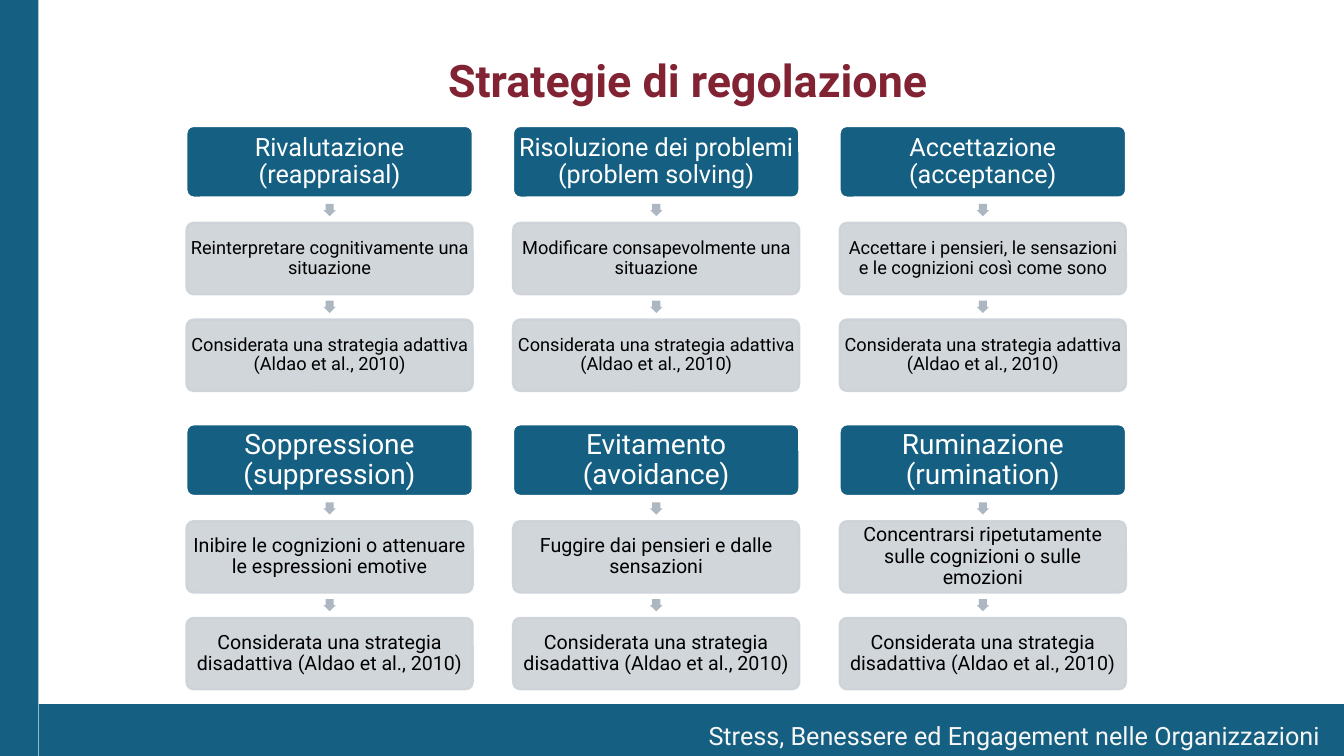
import pptx
import pptx.util
import pptx.dml.color
import pptx.enum.shapes
import pptx.enum.text
import pptx.oxml
import pptx.oxml.ns

Pt = pptx.util.Pt
RGB = pptx.dml.color.RGBColor
SHAPE = pptx.enum.shapes.MSO_SHAPE
ANCHOR = pptx.enum.text.MSO_ANCHOR
ALIGN = pptx.enum.text.PP_ALIGN

BLUE = RGB(0x15, 0x60, 0x82)
RED = RGB(0x82, 0x23, 0x34)
GREY = RGB(0xCC, 0xD2, 0xD8)
STEEL = RGB(0xAC, 0xB7, 0xC1)
PALE = RGB(0xF6, 0xF6, 0xF6)
WHITE = RGB(0xFF, 0xFF, 0xFF)
BLACK = RGB(0, 0, 0)

LEFT, WIDE, HIGH = 133.2, 204.5, 51.1
STEP, DROP, ARROW = 233.3, 69.1, 8.8

GROUPS = [
    (90, 18, 13, "Considerata una strategia adattiva (Aldao et al., 2010)", [
        ("Rivalutazione (reappraisal)",
         "Reinterpretare cognitivamente una situazione"),
        ("Risoluzione dei problemi (problem solving)",
         "Modificare consapevolmente una situazione"),
        ("Accettazione (acceptance)",
         "Accettare i pensieri, le sensazioni e le cognizioni così come sono"),
    ]),
    (303.1, 20, 14, "Considerata una strategia disadattiva (Aldao et al., 2010)", [
        ("Soppressione (suppression)",
         "Inibire le cognizioni o attenuare le espressioni emotive"),
        ("Evitamento (avoidance)",
         "Fuggire dai pensieri e dalle sensazioni"),
        ("Ruminazione (rumination)",
         "Concentrarsi ripetutamente sulle cognizioni o sulle emozioni"),
    ]),
]


class Deck:
    """Draws styled elements on the current slide."""

    font = "Roboto"

    def __init__(self):
        self.show = pptx.Presentation()
        self.show.slide_width, self.show.slide_height = Pt(960), Pt(540)
        self.slide = self.show.slides.add_slide(self.show.slide_layouts[6])

    def shape(self, kind, x, y, w, h, fill):
        item = self.slide.shapes.add_shape(kind, Pt(x), Pt(y), Pt(w), Pt(h))
        item.shadow.inherit = False
        item.fill.solid()
        item.fill.fore_color.rgb = fill
        item.line.fill.background()
        return item

    def words(self, frame, text, size, color, bold=False, align=ALIGN.CENTER):
        frame.word_wrap = True
        para = frame.paragraphs[0]
        para.alignment = align
        run = para.add_run()
        run.text = text
        run.font.name = self.font
        run.font.size = Pt(size)
        run.font.bold = bold
        run.font.color.rgb = color
        return para

    def label(self, x, y, w, h, text, size, color, **style):
        frame = self.slide.shapes.add_textbox(Pt(x), Pt(y), Pt(w), Pt(h)).text_frame
        self.words(frame, text, size, color, **style)
        return frame

    def card(self, x, y, text, size, fill, edge, ink, inset):
        item = self.shape(SHAPE.ROUNDED_RECTANGLE, x, y, WIDE, HIGH, fill)
        item.adjustments[0] = 0.1
        item.line.color.rgb = edge
        item.line.width = Pt(1.5)
        frame = item.text_frame
        frame.margin_left = frame.margin_right = Pt(inset)
        frame.margin_top = frame.margin_bottom = Pt(inset)
        frame.vertical_anchor = ANCHOR.MIDDLE
        self.words(frame, text, size, ink).line_spacing = 0.9
        return item

    def head(self, x, y, text, size):
        self.card(x, y, text, size, BLUE, WHITE, WHITE, 2)

    def note(self, x, y, text, size):
        item = self.card(x, y, text, size, GREY, GREY, BLACK, 1.3)
        for tint in item._element.spPr.iter(pptx.oxml.ns.qn("a:srgbClr")):
            alpha = pptx.oxml.parse_xml(
                "<a:alpha %s val='90000'/>" % pptx.oxml.ns.nsdecls("a"))
            tint.append(alpha)

    def arrow(self, x, y):
        item = self.shape(SHAPE.RIGHT_ARROW, x, y, ARROW, ARROW, STEEL)
        item.rotation = 90
        item.adjustments[0] = 0.667
        item.adjustments[1] = 0.5

    def chain(self, x, y, head, notes, big, small):
        self.head(x, y, head, big)
        for row, text in enumerate(notes, 1):
            top = y + row * DROP
            self.arrow(x + (WIDE - ARROW) / 2, top - (DROP - HIGH + ARROW) / 2)
            self.note(x, top, text, small)


def main():
    deck = Deck()
    deck.shape(SHAPE.RECTANGLE, 0, 0, 27.4, 540, BLUE)
    deck.shape(SHAPE.RECTANGLE, 27.7, 503, 932.3, 37, BLUE)
    deck.label(499, 511.2, 461, 28.8,
               "Stress, Benessere ed Engagement nelle Organizzazioni",
               18, PALE, align=ALIGN.LEFT)
    title = deck.label(155.5, 7.2, 671.8, 104.4, "Strategie di regolazione",
                       32, RED, bold=True)
    title.vertical_anchor = ANCHOR.MIDDLE
    title.paragraphs[0].line_spacing = 0.9
    for top, big, small, verdict, items in GROUPS:
        for col, (head, text) in enumerate(items):
            deck.chain(LEFT + col * STEP, top, head, (text, verdict), big, small)
    deck.show.save("out.pptx")


if __name__ == "__main__":
    main()
